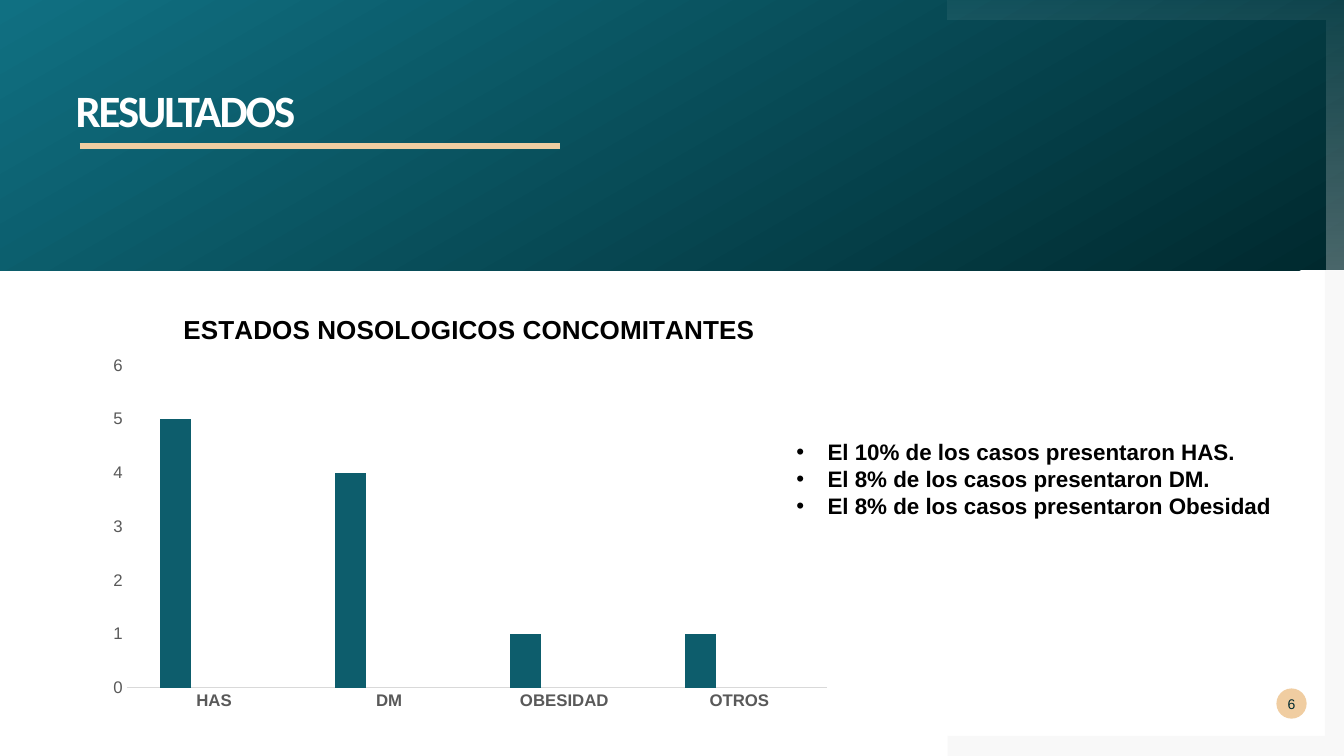
from dataclasses import dataclass

from pptx import Presentation
from pptx.chart.data import CategoryChartData
from pptx.dml.color import RGBColor
from pptx.enum import chart as ch, shapes, text
from pptx.oxml.ns import qn
from pptx.oxml.xmlchemy import OxmlElement
from pptx.util import Inches, Pt


@dataclass(frozen=True)
class Theme:
    font: str = "Arial"
    title_font: str = "Calibri"
    white: str = "FFFFFF"
    black: str = "000000"
    dark: str = "00292E"
    teal: str = "107082"
    sand: str = "F0CDA1"
    frame: str = "808080"
    axis_text: str = "595959"
    axis_line: str = "D9D9D9"
    series: tuple = ("0D5D6C", "107082", "A2B4BB")
    title_size: float = 32
    chart_title_size: float = 18.6
    body_size: float = 16
    axis_size: float = 12
    number_size: float = 10


def rgb(value):
    return RGBColor.from_string(value)


class SlideBuilder:
    def __init__(self, slide, theme):
        self.s = slide
        self.theme = theme

    def style_font(self, font, size, color, bold=False, name=None):
        font.name = name or self.theme.font
        font.size = Pt(size)
        font.bold = bold
        font.color.rgb = rgb(color)

    def fill(self, sp, colors, alphas=(), angle=0):
        """Fill with one colour or a two-stop gradient; angle runs clockwise, alphas in percent."""
        sp.shadow.inherit = False
        sp.line.fill.background()
        if len(colors) == 1:
            sp.fill.solid()
            sp.fill.fore_color.rgb = rgb(colors[0])
        else:
            sp.fill.gradient()
            sp.fill.gradient_angle = (360 - angle) % 360
            for stop, color in zip(sp.fill.gradient_stops, colors):
                stop.color.rgb = rgb(color)
        for clr, percent in zip(sp._element.spPr.iter(qn("a:srgbClr")), alphas):
            alpha = OxmlElement("a:alpha")
            alpha.set("val", str(percent * 1000))
            clr.append(alpha)

    def shape(self, kind, box, colors, angle=0):
        sp = self.s.shapes.add_shape(kind, *map(Inches, box))
        self.fill(sp, colors, angle=angle)
        return sp

    def outline(self, points, colors, alphas, angle=0):
        points = [(Inches(x), Inches(y)) for x, y in points]
        fb = self.s.shapes.build_freeform(*points[0])
        fb.add_line_segments(points[1:], close=True)
        self.fill(fb.convert_to_shape(), colors, alphas, angle)

    def rule(self, x1, x2, y, color, width):
        line = self.s.shapes.add_connector(
            shapes.MSO_CONNECTOR.STRAIGHT, Inches(x1), Inches(y), Inches(x2), Inches(y))
        line.line.color.rgb = rgb(color)
        line.line.width = Pt(width)
        line._element.spPr.append(OxmlElement("a:effectLst"))

    def title(self, box, words):
        tf = self.s.shapes.add_textbox(*map(Inches, box)).text_frame
        tf.word_wrap = True
        tf.margin_left = tf.margin_right = tf.margin_top = tf.margin_bottom = 0
        p = tf.paragraphs[0]
        p.text = words
        p.line_spacing = 0.9
        r = p.runs[0]
        self.style_font(r.font, self.theme.title_size, self.theme.white, True, self.theme.title_font)
        r._r.get_or_add_rPr().set("spc", "-150")

    def bullets(self, box, lines):
        tf = self.s.shapes.add_textbox(*map(Inches, box)).text_frame
        tf.word_wrap = False
        tf.text = "\n".join(lines)
        for p in tf.paragraphs:
            self.style_font(p.runs[0].font, self.theme.body_size, self.theme.black, True)
            pPr = p._p.get_or_add_pPr()
            pPr.set("marL", str(Inches(0.31)))
            pPr.set("indent", str(-Inches(0.31)))
            font = OxmlElement("a:buFont")
            font.set("typeface", self.theme.font)
            bullet = OxmlElement("a:buChar")
            bullet.set("char", "•")
            pPr.extend([font, bullet])

    def page_number(self, box, number):
        sp = self.shape(shapes.MSO_SHAPE.OVAL, box, [self.theme.sand])
        tf = sp.text_frame
        tf.margin_left = tf.margin_right = tf.margin_top = tf.margin_bottom = 0
        tf.vertical_anchor = text.MSO_ANCHOR.MIDDLE
        tf.text = number
        p = tf.paragraphs[0]
        p.alignment = text.PP_ALIGN.CENTER
        self.style_font(p.runs[0].font, self.theme.number_size, self.theme.dark)

    def column_chart(self, box, heading, categories, series, plot_area):
        """Draw clustered columns; plot_area is x, y, w, h as fractions of the chart."""
        t = self.theme
        data = CategoryChartData()
        data.categories = categories
        for name, values in series:
            data.add_series(name, values)
        chart = self.s.shapes.add_chart(
            ch.XL_CHART_TYPE.COLUMN_CLUSTERED, *map(Inches, box), data).chart
        self.style_font(chart.font, t.number_size, t.black)
        chart.has_legend = False
        tf = chart.chart_title.text_frame
        tf.text = heading
        self.style_font(tf.paragraphs[0].runs[0].font, t.chart_title_size, t.black, True)
        chart.chart_title.include_in_layout = False

        plot = chart.plots[0]
        plot.gap_width = 219
        plot.overlap = -27
        plot.vary_by_categories = False
        for column, color in zip(plot.series, t.series):
            column.format.fill.solid()
            column.format.fill.fore_color.rgb = rgb(color)

        for axis, bold in ((chart.category_axis, True), (chart.value_axis, False)):
            axis.has_major_gridlines = False
            axis.major_tick_mark = axis.minor_tick_mark = ch.XL_TICK_MARK.NONE
            self.style_font(axis.tick_labels.font, t.axis_size, t.axis_text, bold)
        chart.category_axis.format.line.color.rgb = rgb(t.axis_line)
        chart.category_axis.format.line.width = Pt(0.75)
        value_axis = chart.value_axis
        value_axis.format.line.fill.background()
        value_axis.minimum_scale, value_axis.maximum_scale = 0, 6
        value_axis.major_unit = 1

        area = chart._chartSpace.chart.plotArea
        for old in area.findall(qn("c:layout")):
            area.remove(old)
        layout, manual = OxmlElement("c:layout"), OxmlElement("c:manualLayout")
        layout.append(manual)
        settings = [("layoutTarget", "inner"), ("xMode", "edge"), ("yMode", "edge")]
        for tag, value in settings + list(zip("xywh", plot_area)):
            item = OxmlElement(f"c:{tag}")
            item.set("val", str(value))
            manual.append(item)
        area.insert(0, layout)


def main():
    prs = Presentation()
    prs.slide_width, prs.slide_height = Inches(13.33), Inches(7.5)
    t = Theme()
    b = SlideBuilder(prs.slides.add_slide(prs.slide_layouts[6]), t)

    left, inner, right = 9.4, 13.14, 13.33
    band, bottom, edge = 2.68, 7.5, 0.2
    b.outline([(inner, band), (right, band), (right, bottom), (left, bottom),
               (left, bottom - edge), (inner, bottom - edge)], [t.frame], [5])
    b.shape(shapes.MSO_SHAPE.RECTANGLE, (0, 0, right, band), [t.dark, t.teal], angle=240)
    b.outline([(left, 0), (right, 0), (right, band), (inner, band), (inner, edge), (left, edge)],
              [t.white, t.white], [5, 30], angle=90)

    b.title((0.75, 0.88, 8.27, 0.4), "RESULTADOS")
    b.page_number((12.66, 6.83, 0.3, 0.3), "6")
    b.rule(0.79, 5.55, 1.45, t.sand, 4.32)
    b.bullets((7.8, 4.3, 4.97, 1.72), [
        "El 10% de los casos presentaron HAS.",
        "El 8% de los casos presentaron DM.",
        "El 8% de los casos presentaron Obesidad",
    ])
    b.column_chart(
        (0.96, 2.91, 7.39, 4.21), "ESTADOS NOSOLOGICOS CONCOMITANTES",
        ["HAS", "DM", "OBESIDAD", "OTROS"],
        [("Series 1", [5, 4, 1, 1]), ("Series 2", [None] * 4), ("Series 3", [None] * 4)],
        (0.04, 0.17, 0.94, 0.76))
    prs.save("out.pptx")


if __name__ == "__main__":
    main()
